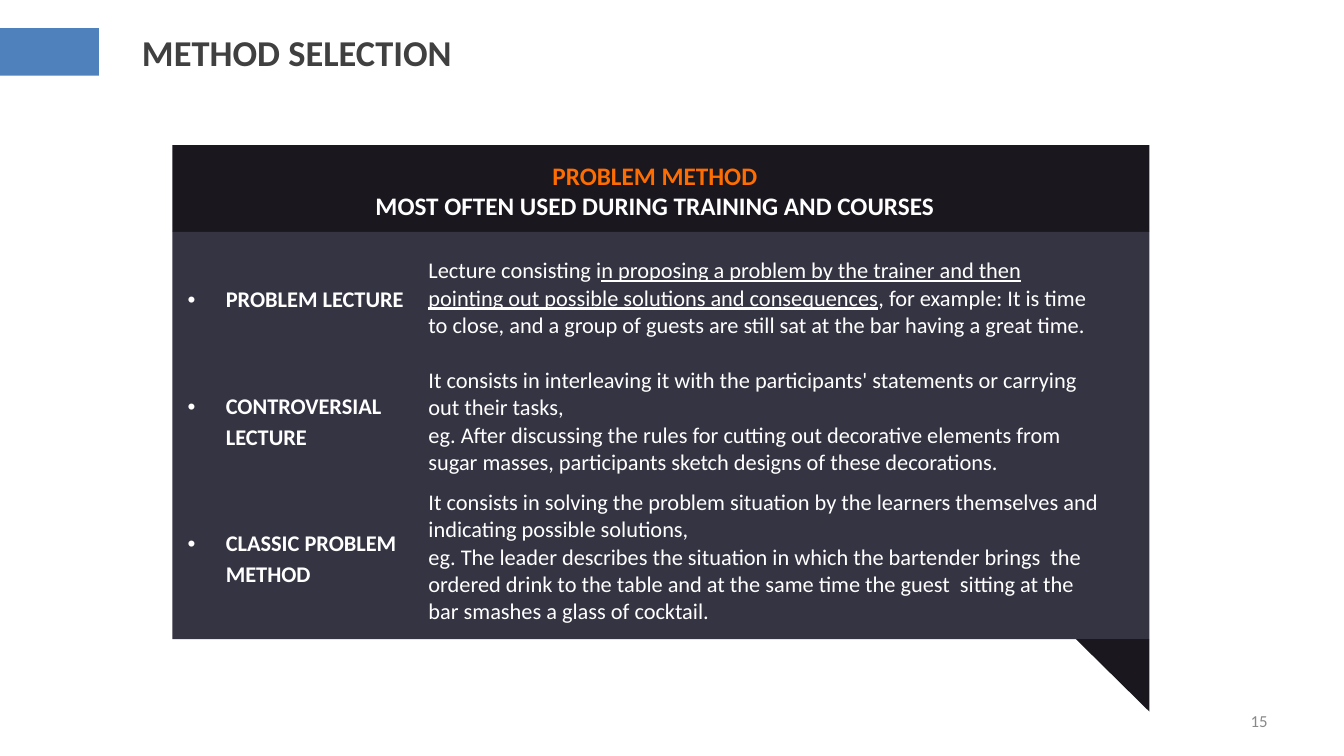
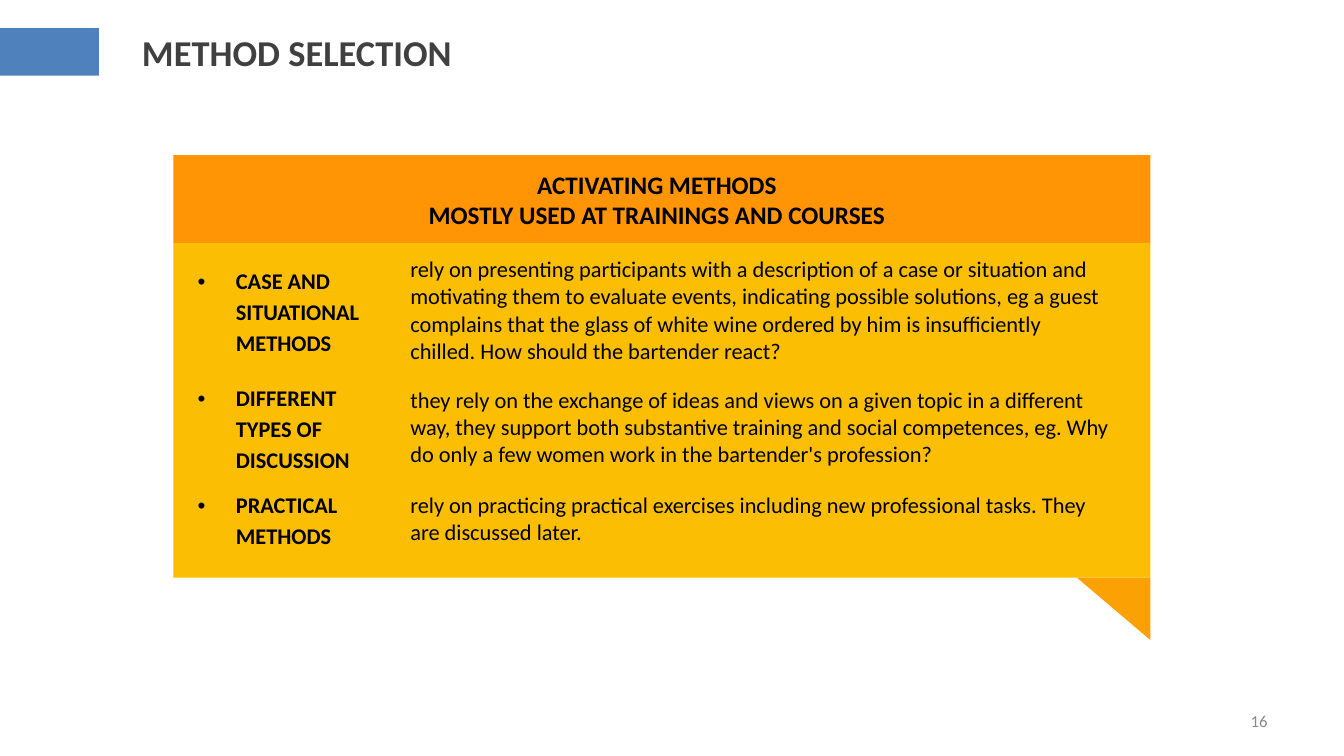
from lxml.etree import SubElement
from pptx import Presentation
from pptx.dml.color import RGBColor
from pptx.enum.shapes import MSO_SHAPE
from pptx.enum.text import MSO_ANCHOR, PP_ALIGN
from pptx.oxml.ns import qn
from pptx.util import Inches, Pt

PLAIN_TABLE = "{2D5ABB26-0587-4C30-8999-92F81FD0307C}"


def color(value):
    return RGBColor.from_string(value)


class Slides:
    """Hold the shared style and the current slide."""

    font = "Calibri"
    band = "4F81BD"
    title_color = "404040"
    number_color = "898989"

    def __init__(self):
        self.deck = Presentation()
        self.deck.slide_width = Inches(13.33)
        self.deck.slide_height = Inches(7.5)
        self.page = None

    def start(self, title, number):
        self.page = self.deck.slides.add_slide(self.deck.slide_layouts[6])
        self.shape(MSO_SHAPE.RECTANGLE, 0, 0.28, 0.98, 0.47, self.band)
        self.text(1.31, 0.21, 9.29, 0.62, [(title, self.title_color)], 26, bold=True)
        self.text(9.56, 6.95, 3.11, 0.4, [(number, self.number_color)], 12, PP_ALIGN.RIGHT)

    def shape(self, kind, left, top, width, height, fill, rotation=0):
        shape = self.page.shapes.add_shape(
            kind, Inches(left), Inches(top), Inches(width), Inches(height))
        shape.shadow.inherit = False
        shape.fill.solid()
        shape.fill.fore_color.rgb = color(fill)
        shape.line.fill.background()
        shape.rotation = rotation

    def span(self, paragraph, words, size, ink, bold=False, underline=False):
        span = paragraph.add_run()
        span.text = words
        span.font.name = self.font
        span.font.size = Pt(size)
        span.font.bold = bold
        span.font.underline = underline
        span.font.color.rgb = color(ink)

    def paragraphs(self, frame, count):
        return [frame.paragraphs[0]] + [frame.add_paragraph() for _ in range(count - 1)]

    def text(self, left, top, width, height, lines, size,
             align=PP_ALIGN.LEFT, anchor=MSO_ANCHOR.MIDDLE, bold=False):
        box = self.page.shapes.add_textbox(
            Inches(left), Inches(top), Inches(width), Inches(height))
        frame = box.text_frame
        frame.word_wrap = True
        frame.vertical_anchor = anchor
        for paragraph, (words, ink) in zip(self.paragraphs(frame, len(lines)), lines):
            paragraph.alignment = align
            self.span(paragraph, words, size, ink, bold)

    def bullet(self, paragraph):
        properties = paragraph._p.get_or_add_pPr()
        properties.set("marL", str(Inches(0.38)))
        properties.set("indent", str(-Inches(0.38)))
        SubElement(properties, qn("a:buFont"), typeface="Arial")
        SubElement(properties, qn("a:buChar"), char="•")
        paragraph.line_spacing = 1.14
        paragraph.space_after = Pt(6)

    def table(self, left, top, columns, heights, rows, ink):
        table = self.page.shapes.add_table(
            len(rows), len(columns), Inches(left), Inches(top),
            Inches(sum(columns)), Inches(sum(heights))).table
        table.first_row = table.horz_banding = False
        table._tbl.tblPr.find(qn("a:tableStyleId")).text = PLAIN_TABLE
        for column, width in zip(table.columns, columns):
            column.width = Inches(width)
        for row, height, (method, description) in zip(table.rows, heights, rows):
            row.height = Inches(height)
            for cell in row.cells:
                cell.fill.background()
                cell.vertical_anchor = MSO_ANCHOR.MIDDLE
            name, details = row.cells
            heading = name.text_frame.paragraphs[0]
            self.bullet(heading)
            self.span(heading, method, 16, ink, bold=True)
            lines = self.paragraphs(details.text_frame, len(description))
            for paragraph, parts in zip(lines, description):
                for index, words in enumerate(parts):
                    self.span(paragraph, words, 16, ink, underline=index % 2 == 1)

    def panel(self, left, top, header_height, body_height, tail_height, header, body, tail):
        width, tail_width = 9.69, 0.73
        body_top = top + header_height
        self.shape(MSO_SHAPE.RECTANGLE, left, top, width, header_height, header)
        self.shape(MSO_SHAPE.RECTANGLE, left, body_top, width, body_height, body)
        self.shape(MSO_SHAPE.RIGHT_TRIANGLE, left + width - tail_width,
                   body_top + body_height, tail_width, tail_height, tail, 180)

    def heading(self, left, top, lines):
        self.text(left, top, 9.21, 0.71, lines, 18, PP_ALIGN.CENTER, MSO_ANCHOR.TOP, True)


def problem_methods(slides):
    white = "FFFFFF"
    slides.start("METHOD SELECTION", "15")
    slides.panel(1.71, 1.44, 0.86, 4.04, 0.72, "1A171F", "353443", "1A171F")
    slides.heading(1.89, 1.54, [
        ("PROBLEM METHOD", "FD6D01"),
        ("MOST OFTEN USED DURING TRAINING AND COURSES", white)])
    slides.table(1.76, 2.33, [2.39, 6.87], [1.26, 0.97, 1.55], [
        ("PROBLEM LECTURE", [[
            "Lecture consisting i",
            "n proposing a problem by the trainer and then pointing out possible "
            "solutions and consequences",
            ", for example: It is time to close, and a group of guests are still sat "
            "at the bar having a great time."]]),
        ("CONTROVERSIAL LECTURE", [
            ["It consists in interleaving it with the participants' statements or "
             "carrying out their tasks,"],
            ["eg. After discussing the rules for cutting out decorative elements from "
             "sugar masses, participants sketch designs of these decorations."]]),
        ("CLASSIC PROBLEM METHOD", [
            ["It consists in solving the problem situation by the learners themselves "
             "and indicating possible solutions,"],
            ["eg. The leader describes the situation in which the bartender brings  the "
             "ordered drink to the table and at the same time the guest  sitting at the "
             "bar smashes a glass of cocktail."]])], white)


def activating_methods(slides):
    black = "000000"
    slides.start("METHOD SELECTION", "16")
    slides.panel(1.72, 1.54, 0.87, 3.32, 0.62, "FF9405", "FBBE03", "FBA103")
    slides.heading(1.91, 1.63, [
        ("ACTIVATING METHODS", black),
        ("MOSTLY USED AT TRAININGS AND COURSES", black)])
    slides.table(1.86, 2.46, [2.11, 7.15], [1.25, 1.07, 0.74], [
        ("CASE AND SITUATIONAL METHODS", [[
            "rely on presenting participants with a description of a case or situation "
            "and motivating them to evaluate events, indicating possible solutions, eg a "
            "guest complains that the glass of white wine ordered by him is "
            "insufficiently chilled. How should the bartender react?"]]),
        ("DIFFERENT TYPES OF DISCUSSION", [[
            "they rely on the exchange of ideas and views on a given topic in a "
            "different way, they support both substantive training and social "
            "competences, eg. Why do only a few women work in the bartender's "
            "profession?"]]),
        ("PRACTICAL METHODS", [[
            "rely on practicing practical exercises including new professional tasks. "
            "They are discussed later."]])], black)


def main():
    slides = Slides()
    problem_methods(slides)
    activating_methods(slides)
    slides.deck.save("out.pptx")


if __name__ == "__main__":
    main()
